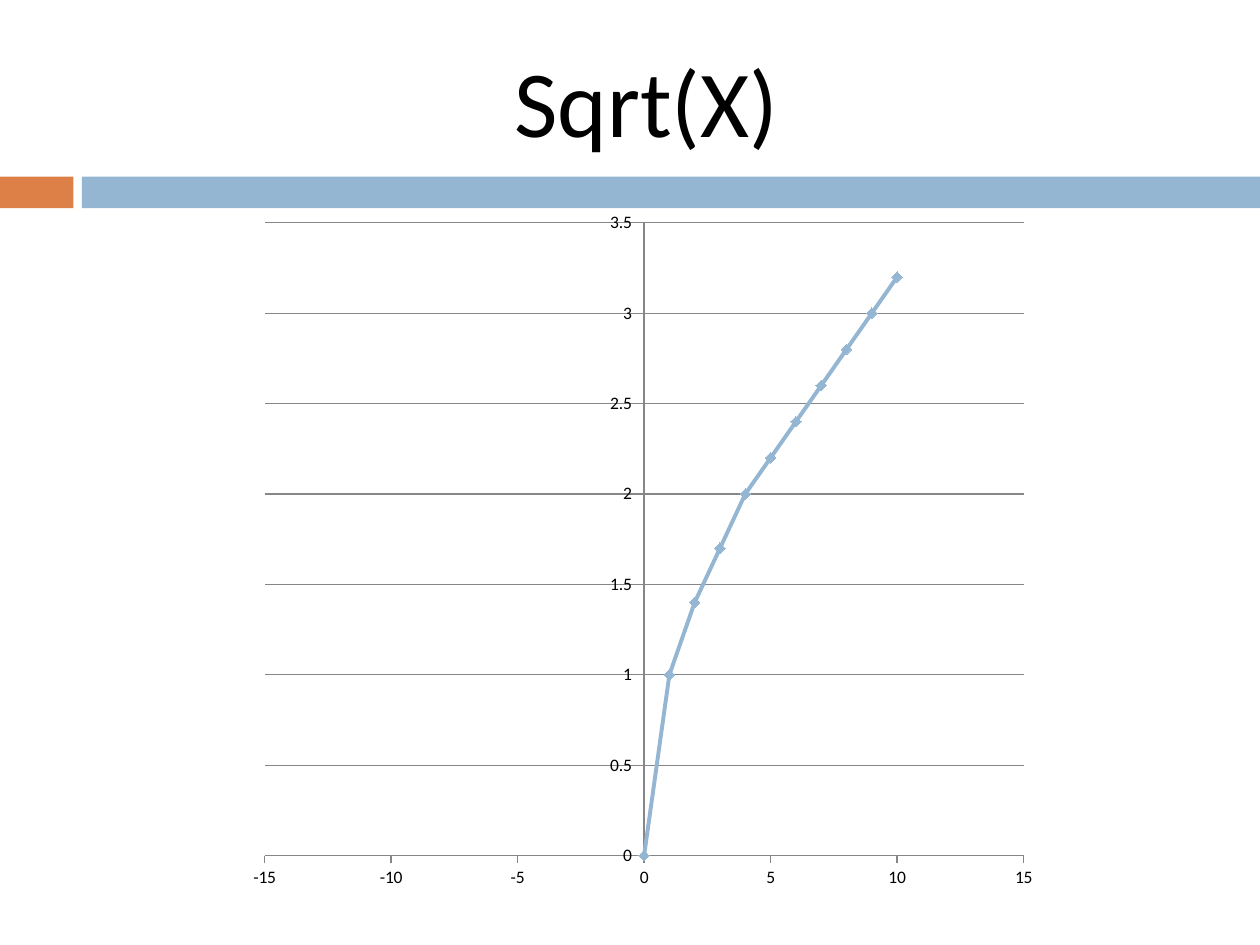
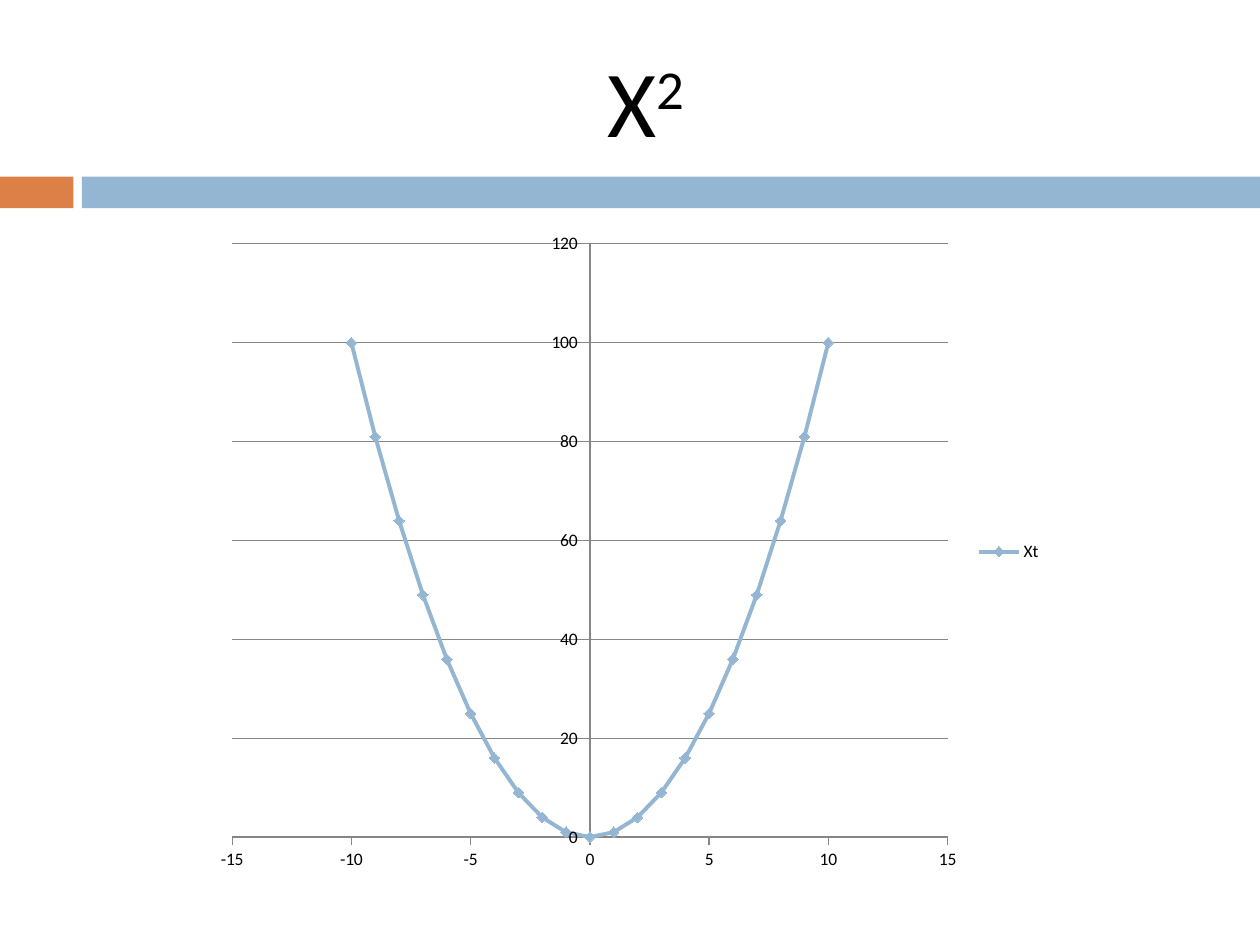
import dataclasses
import math

import pptx
import pptx.chart.data
import pptx.dml.color
import pptx.enum.chart
import pptx.enum.shapes
import pptx.enum.text
import pptx.util
from pptx.util import Cm


@dataclasses.dataclass(frozen=True)
class Theme:
    orange: pptx.dml.color.RGBColor = pptx.dml.color.RGBColor(0xDD, 0x80, 0x47)
    blue: pptx.dml.color.RGBColor = pptx.dml.color.RGBColor(0x94, 0xB6, 0xD2)
    black: pptx.dml.color.RGBColor = pptx.dml.color.RGBColor(0, 0, 0)
    grid: pptx.dml.color.RGBColor = pptx.dml.color.RGBColor(0x86, 0x86, 0x86)
    font: str = "Calibri"
    title_size: int = 54
    chart_size: int = 10


theme = Theme()


def add_text(paragraph, text, size=theme.title_size, color=theme.black, raised=0):
    run = paragraph.add_run()
    run.text = text
    run.font.name = theme.font
    run.font.size = pptx.util.Pt(size)
    run.font.color.rgb = color
    if raised:
        run.font._element.set("baseline", str(raised * 1000))


presentation = pptx.Presentation()
presentation.slide_width = Cm(25.4)
presentation.slide_height = Cm(19.05)

# Bands: left, width, colour
bands = [(0, 1.48, theme.orange), (1.65, 23.75, theme.blue)]

# Functions: title runs with their raise, chart box, series name, legend, values
x_values = range(-10, 11)
functions = [
    ([("Sqrt(X)", 0)], (4.78, 4.01, 16.36, 14.17), "Series 1", False,
     [round(math.sqrt(x), 1) if x >= 0 else None for x in x_values]),
    ([("X", 0), ("2", 30)], (4.11, 4.45, 17.15, 13.34), "Xt", True,
     [x * x for x in x_values]),
]

for title_runs, chart_box, series_name, with_legend, y_values in functions:
    slide = presentation.slides.add_slide(presentation.slide_layouts[6])

    # Bands under the title
    for left, width, color in bands:
        band = slide.shapes.add_shape(
            pptx.enum.shapes.MSO_SHAPE.RECTANGLE, Cm(left), Cm(3.56), Cm(width), Cm(0.64))
        band.shadow.inherit = False
        band.fill.solid()
        band.fill.fore_color.rgb = color
        band.line.fill.background()

    # Title
    title = slide.shapes.add_textbox(Cm(1.7), Cm(0.64), Cm(22.66), Cm(2.74)).text_frame
    title.word_wrap = True
    title.vertical_anchor = pptx.enum.text.MSO_ANCHOR.MIDDLE
    title.paragraphs[0].alignment = pptx.enum.text.PP_ALIGN.CENTER
    for text, raised in title_runs:
        add_text(title.paragraphs[0], text, raised=raised)

    # Curve
    points = pptx.chart.data.XyChartData()
    point_series = points.add_series(series_name)
    for x, y in zip(x_values, y_values):
        point_series.add_data_point(x, y)
    chart = slide.shapes.add_chart(
        pptx.enum.chart.XL_CHART_TYPE.XY_SCATTER_SMOOTH,
        *map(Cm, chart_box), points).chart
    chart.has_title = False
    chart.font.name = theme.font
    chart.font.size = pptx.util.Pt(theme.chart_size)
    chart.font.color.rgb = theme.black
    chart.has_legend = with_legend
    if with_legend:
        chart.legend.position = pptx.enum.chart.XL_LEGEND_POSITION.RIGHT
        chart.legend.include_in_layout = False

    curve = chart.plots[0].series[0]
    chart.plots[0].vary_by_categories = False
    curve.smooth = True
    curve.format.line.color.rgb = theme.blue
    curve.format.line.width = pptx.util.Pt(2.25)
    curve.marker.style = pptx.enum.chart.XL_MARKER_STYLE.DIAMOND
    curve.marker.size = 6
    curve.marker.format.fill.solid()
    curve.marker.format.fill.fore_color.rgb = theme.blue
    curve.marker.format.line.color.rgb = theme.blue

    # Undefined values leave a gap in the curve
    for point in curve._element.xpath(".//c:pt[c:v='None' or c:v='']"):
        point.getparent().remove(point)

    # Axes and gridlines
    chart.category_axis.has_major_gridlines = False
    chart.value_axis.has_major_gridlines = True
    chart.category_axis.minimum_scale = -15
    chart.category_axis.maximum_scale = 15
    chart.category_axis.major_unit = 5
    axis_lines = [chart.value_axis.major_gridlines.format.line]
    for axis in (chart.category_axis, chart.value_axis):
        axis.major_tick_mark = pptx.enum.chart.XL_TICK_MARK.OUTSIDE
        axis.minor_tick_mark = pptx.enum.chart.XL_TICK_MARK.NONE
        axis_lines.append(axis.format.line)
    for line in axis_lines:
        line.color.rgb = theme.grid
        line.width = pptx.util.Pt(0.75)

presentation.save("out.pptx")
